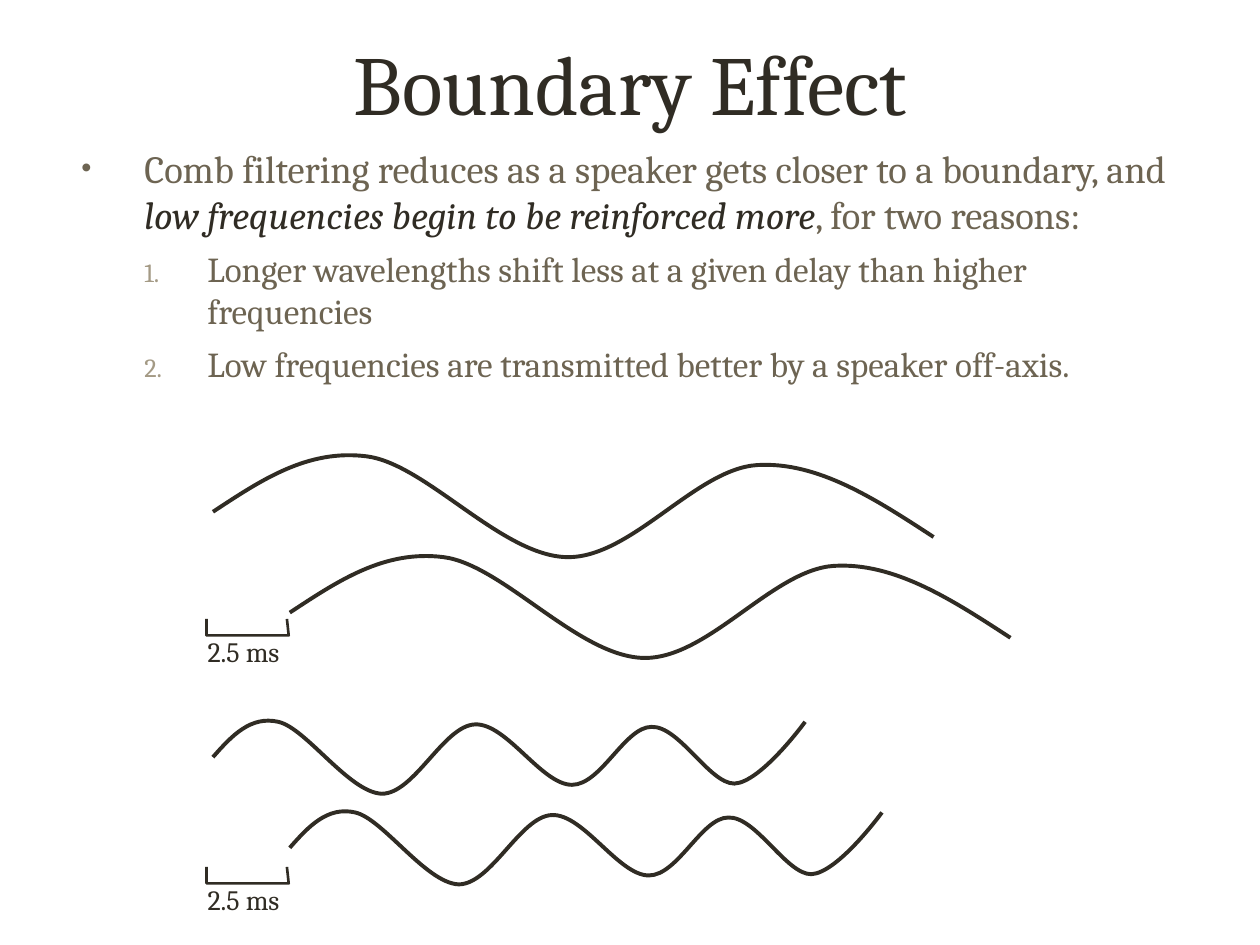
from lxml import etree
from pptx import Presentation
from pptx.dml.color import RGBColor
from pptx.enum.text import MSO_ANCHOR, MSO_AUTO_SIZE, PP_ALIGN
from pptx.oxml.ns import qn
from pptx.util import Pt

CENTER = PP_ALIGN.CENTER
TOP, BOTTOM = MSO_ANCHOR.TOP, MSO_ANCHOR.BOTTOM
FIT_SHAPE = MSO_AUTO_SIZE.SHAPE_TO_FIT_TEXT
FONT, BULLET_FONT = "Cambria", "Arial"
DARK, BROWN, TAN = "302C24", "6D6452", "A49A85"

LOW_WAVE = [
    (0, 31.7),
    (27.4, 13.7), (54, -4.3), (87.8, 0),
    (121.7, 4.3), (164.9, 56.9), (202.3, 57.6),
    (239, 58.3), (275.8, 7.2), (311, 5),
    (345.6, 2.9), (378.7, 24.5), (411.8, 46.1),
]
HIGH_WAVE = [
    (0, 20.9),
    (10.8, 8.6), (21.6, -2.9), (37.4, 0.7),
    (53.3, 4.3), (77.8, 41), (96.5, 41.8),
    (115.2, 41.8), (131.8, 2.9), (149.8, 2.2),
    (167.8, 1.4), (187.9, 36.7), (205.2, 36.7),
    (221.8, 36.7), (235.4, 3.6), (250.6, 3.6),
    (266.4, 2.9), (283.7, 36), (298, 36),
    (313.2, 35.3), (338.4, 0.7), (338.4, 0.7),
]
BRACKET = [(0, 0), (0, 9.4), (47, 9.4), (46, 0)]
REASONS = [
    "Longer wavelengths shift less at a given delay than higher frequencies",
    "Low frequencies are transmitted better by a speaker off-axis.",
]


def color(value):
    """Return the colour for a hex string."""
    return RGBColor.from_string(value)


def add_run(paragraph, text, size, fill=DARK, italic=False):
    """Append formatted text to a paragraph."""
    run = paragraph.add_run()
    run.text = text
    run.font.name = FONT
    run.font.size = Pt(size)
    run.font.italic = italic
    run.font.color.rgb = color(fill)


def add_text_frame(slide, left, top, width, height, anchor=TOP, wrap=True):
    """Add a text box and return its text frame."""
    text_box = slide.shapes.add_textbox(Pt(left), Pt(top), Pt(width), Pt(height))
    frame = text_box.text_frame
    frame.word_wrap = wrap
    frame.vertical_anchor = anchor
    return frame


def add_bullet(paragraph, margin, fill, font, tag, **attributes):
    """Give a paragraph a hanging bullet or number."""
    properties = paragraph._p.get_or_add_pPr()
    properties.set("marL", str(Pt(margin)))
    properties.set("indent", str(Pt(-36)))
    bullet_color = etree.SubElement(properties, qn("a:buClr"))
    etree.SubElement(bullet_color, qn("a:srgbClr"), val=fill)
    etree.SubElement(properties, qn("a:buSzPct"), val="75000")
    etree.SubElement(properties, qn("a:buFont"), typeface=font)
    etree.SubElement(properties, qn(tag), **attributes)


def add_title(slide, left, top, width, height):
    """Place the slide title."""
    frame = add_text_frame(slide, left, top, width, height, anchor=BOTTOM)
    paragraph = frame.paragraphs[0]
    paragraph.alignment = CENTER
    add_run(paragraph, "Boundary Effect", 48)


def add_body(slide, left, top, width, height):
    """Place the statement and its numbered reasons."""
    frame = add_text_frame(slide, left, top, width, height)
    statement = frame.paragraphs[0]
    add_bullet(statement, 36, BROWN, BULLET_FONT, "a:buChar", char="•")
    add_run(statement, "Comb filtering reduces as a speaker gets closer to a boundary, and ",
            22, fill=BROWN)
    add_run(statement, "low frequencies begin to be reinforced more", 22, italic=True)
    add_run(statement, ", for two reasons:", 22, fill=BROWN)
    for reason in REASONS:
        paragraph = frame.add_paragraph()
        paragraph.level = 1
        add_bullet(paragraph, 72, TAN, FONT, "a:buAutoNum", type="arabicPeriod")
        paragraph.space_before = Pt(6)
        add_run(paragraph, reason, 20, fill=BROWN)


def add_outline(slide, points, left, top, weight):
    """Draw an open line through points placed from a corner."""
    vertices = [(Pt(left + x), Pt(top + y)) for x, y in points]
    builder = slide.shapes.build_freeform(*vertices[0])
    builder.add_line_segments(vertices[1:], close=False)
    shape = builder.convert_to_shape()
    shape.shadow.inherit = False
    shape.fill.background()
    shape.line.color.rgb = color(DARK)
    shape.line.width = Pt(weight)
    return shape


def add_wave(slide, controls, left, top):
    """Draw a smooth line from a chain of cubic control points."""
    anchors = controls[::3]
    shape = add_outline(slide, anchors, left, top, 2.25)
    origin_x = min(x for x, y in anchors)
    origin_y = min(y for x, y in anchors)
    segments = list(shape._element.iter(qn("a:lnTo")))
    for number, segment in enumerate(segments):
        segment.tag = qn("a:cubicBezTo")
        handles = controls[3 * number + 1:3 * number + 3]
        for position, (x, y) in enumerate(handles):
            handle = etree.Element(qn("a:pt"), x=str(Pt(x - origin_x)), y=str(Pt(y - origin_y)))
            segment.insert(position, handle)


def add_delay_panel(slide, left, top, controls, echo_drop, bracket_drop):
    """Place a wave, its delayed echo and the marked delay."""
    add_wave(slide, controls, left + 3.7, top)
    add_wave(slide, controls, left + 47.6, top + echo_drop)
    add_outline(slide, BRACKET, left, top + bracket_drop, 1.5)
    frame = add_text_frame(slide, left - 6.5, top + bracket_drop + 5.5, 60, 26.6, wrap=False)
    frame.auto_size = FIT_SHAPE
    add_run(frame.paragraphs[0], "2.5 ms", 16)


def main():
    """Build and save the slide."""
    presentation = Presentation()
    presentation.slide_width = Pt(720)
    presentation.slide_height = Pt(540)
    slide = presentation.slides.add_slide(presentation.slide_layouts[6])
    add_title(slide, 39.4, 7.2, 641.5, 72)
    add_body(slide, 39.4, 79.2, 641.5, 450)
    add_delay_panel(slide, 118, 260.8, LOW_WAVE, 57.6, 92.9)
    add_delay_panel(slide, 118, 411.8, HIGH_WAVE, 51.8, 83.6)
    presentation.save("out.pptx")


if __name__ == "__main__":
    main()
